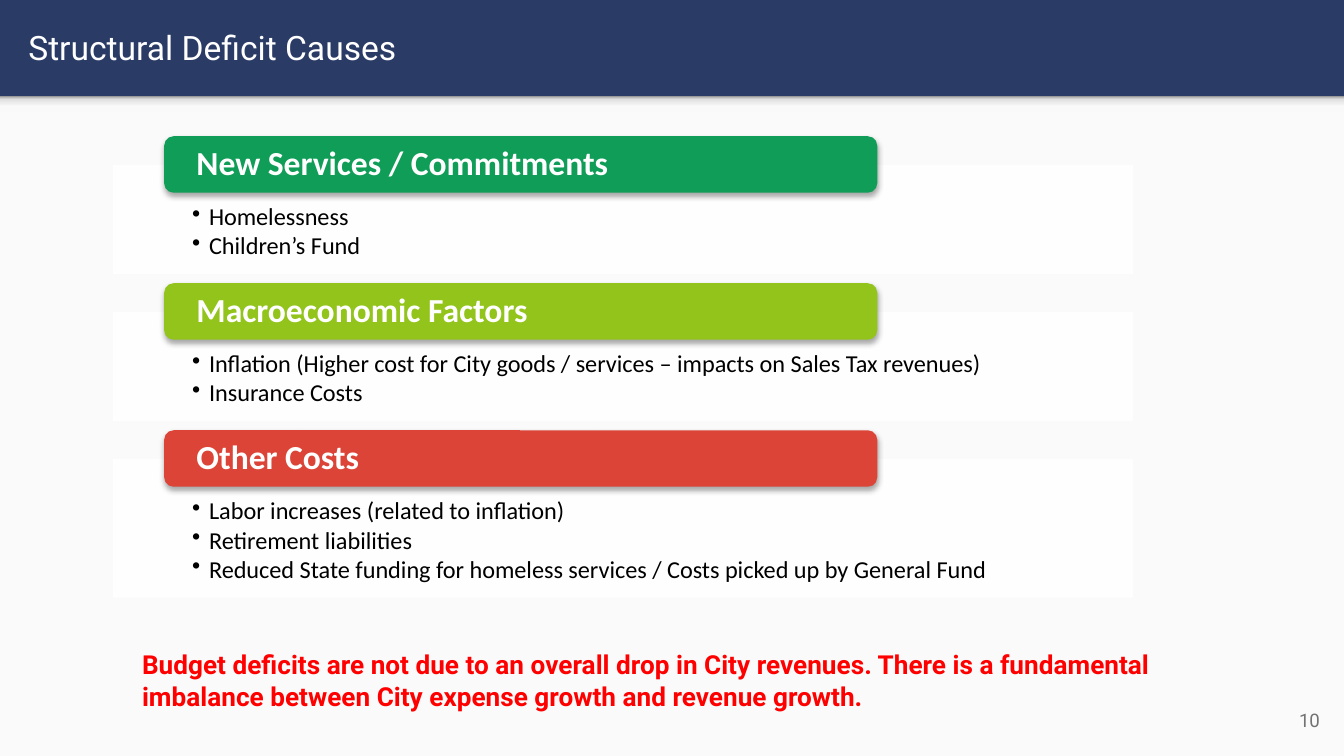
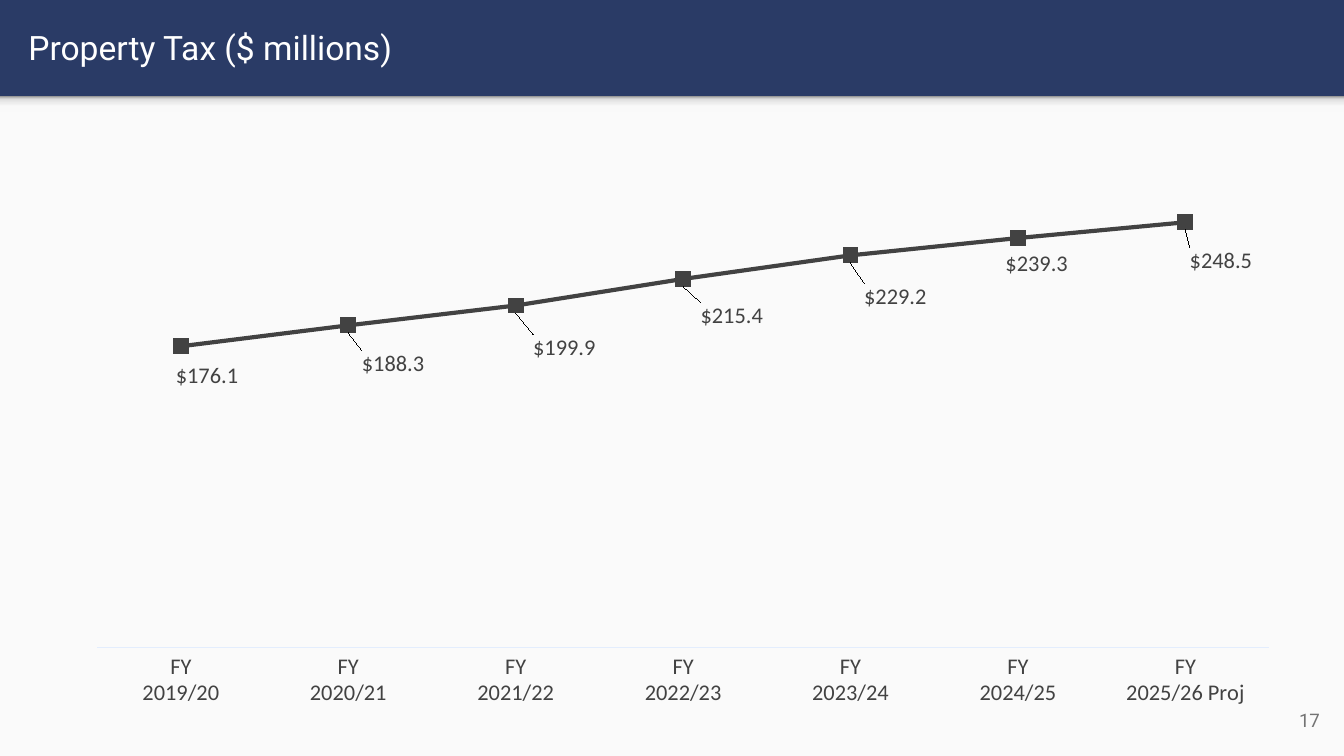
from dataclasses import dataclass

from lxml.etree import SubElement
from pptx import Presentation
from pptx.chart.chart import Chart
from pptx.chart.data import CategoryChartData
from pptx.dml.color import RGBColor
from pptx.enum.chart import XL_CHART_TYPE as ChartType
from pptx.enum.chart import XL_LABEL_POSITION as LabelPosition
from pptx.enum.chart import XL_MARKER_STYLE as MarkerStyle
from pptx.enum.chart import XL_TICK_MARK as TickMark
from pptx.enum.shapes import MSO_AUTO_SHAPE_TYPE as ShapeType
from pptx.enum.text import MSO_ANCHOR as Anchor
from pptx.enum.text import PP_ALIGN as Align
from pptx.oxml import parse_xml
from pptx.oxml.ns import nsdecls, qn
from pptx.shapes.autoshape import Shape
from pptx.slide import Slide
from pptx.text.text import TextFrame
from pptx.util import Pt


@dataclass(frozen=True)
class Theme:
    heading_font: str = "Roboto"
    body_font: str = "Calibri"
    navy: str = "2A3B66"
    page: str = "FAFAFA"
    white: str = "FFFFFF"
    black: str = "000000"
    green: str = "0F9D58"
    lime: str = "92C41B"
    tomato: str = "DB4437"
    alert: str = "FF0000"
    footer: str = "737373"
    chart_ink: str = "424242"
    axis: str = "E3EDFD"
    band_stops: tuple[tuple[int, str], ...] = (
        (0, "F9F9F9"), (36, "F9F9F9"), (80, "DEDEDE"), (100, "999999"))
    title_size: float = 18
    alert_size: float = 14
    bullet_size: float = 13
    chart_size: float = 12
    footer_size: float = 10


@dataclass(frozen=True)
class Box:
    left: float
    top: float
    width: float
    height: float

    def lengths(self) -> tuple[Pt, Pt, Pt, Pt]:
        return Pt(self.left), Pt(self.top), Pt(self.width), Pt(self.height)


@dataclass(frozen=True)
class Cause:
    heading: str
    color: str
    bullets: tuple[str, ...]


@dataclass(frozen=True)
class TaxYear:
    label: str
    millions: float
    shift_x: float
    shift_y: float


THEME = Theme()
SLIDE_WIDTH, SLIDE_HEIGHT = 720, 405
BAND_TOP = 51.5
TITLE_BOX = Box(8, 1.5, 695, 47.5)
NUMBER_BOX = Box(671, 370, 43.2, 31)
ALERT_BOX = Box(69, 344, 610, 41)
CHART_BOX = Box(39, 65.5, 654, 320)
PANEL_LEFT, PANEL_TOP, PANEL_WIDTH, PANEL_GAP = 60.5, 88.25, 546.5, 20.25
PANEL_BASE_HEIGHT, BULLET_HEIGHT = 26.5, 16
PILL_LEFT, PILL_WIDTH, PILL_HEIGHT, PILL_RISE = 88, 382, 30.25, 15.25
DOLLARS = '"$"#,##0.0'

CAUSES = (
    Cause("New Services / Commitments", THEME.green,
          ("Homelessness", "Children’s Fund")),
    Cause("Macroeconomic Factors", THEME.lime,
          ("Inflation (Higher cost for City goods / services – impacts on Sales Tax revenues)",
           "Insurance Costs")),
    Cause("Other Costs", THEME.tomato,
          ("Labor increases (related to inflation)",
           "Retirement liabilities",
           "Reduced State funding for homeless services / Costs picked up by General Fund")),
)
ALERT = ("Budget deficits are not due to an overall drop in City revenues. There is a "
         "fundamental imbalance between City expense growth and revenue growth.")
TAX_YEARS = (
    TaxYear("2019/20", 176.1, 14, 2),
    TaxYear("2020/21", 188.3, 24, 6.5),
    TaxYear("2021/22", 199.9, 26, 8.5),
    TaxYear("2022/23", 215.4, 26, 5.5),
    TaxYear("2023/24", 229.2, 24, 8),
    TaxYear("2024/25", 239.3, 10, 0),
    TaxYear("2025/26 Proj", 248.5, 19, 6.5),
)


def rgb(color: str) -> RGBColor:
    return RGBColor.from_string(color)


def style_font(font, name: str, size: float, color: str, bold: bool = False) -> None:
    font.name = name
    font.size = Pt(size)
    font.bold = bold
    font.color.rgb = rgb(color)


def set_insets(frame: TextFrame, left: float, top: float, right: float, bottom: float) -> None:
    frame.word_wrap = True
    frame.margin_left, frame.margin_top = Pt(left), Pt(top)
    frame.margin_right, frame.margin_bottom = Pt(right), Pt(bottom)


def add_block(slide: Slide, kind: ShapeType, box: Box, color: str) -> Shape:
    shape = slide.shapes.add_shape(kind, *box.lengths())
    shape.shadow.inherit = False
    shape.fill.solid()
    shape.fill.fore_color.rgb = rgb(color)
    shape.line.fill.background()
    return shape


def add_text(slide: Slide, box: Box, text: str, size: float, color: str,
             bold: bool = False) -> TextFrame:
    frame = slide.shapes.add_textbox(*box.lengths()).text_frame
    frame.word_wrap = True
    frame.text = text
    style_font(frame.paragraphs[0].runs[0].font, THEME.heading_font, size, color, bold)
    return frame


def add_band_shade(slide: Slide) -> None:
    shade = add_block(slide, ShapeType.RECTANGLE, Box(0, BAND_TOP, SLIDE_WIDTH, 8.5), THEME.page)
    shade.fill.gradient()
    shade.fill.gradient_angle = 90
    stops = shade._element.spPr.find(".//" + qn("a:gsLst"))
    stops.clear()
    for position, color in THEME.band_stops:
        stop = SubElement(stops, qn("a:gs"), pos=str(position * 1000))
        SubElement(stop, qn("a:srgbClr"), val=color)


def add_page(presentation: Presentation, title: str, number: int) -> Slide:
    slide = presentation.slides.add_slide(presentation.slide_layouts.get_by_name("Title Only"))
    add_block(slide, ShapeType.RECTANGLE,
              Box(0, BAND_TOP, SLIDE_WIDTH, SLIDE_HEIGHT - BAND_TOP), THEME.page)
    add_band_shade(slide)

    heading = slide.shapes.title
    heading.left, heading.top, heading.width, heading.height = TITLE_BOX.lengths()
    frame = heading.text_frame
    frame.text = title
    frame.vertical_anchor = Anchor.MIDDLE
    set_insets(frame, 7.2, 7.2, 7.2, 7.2)
    frame.paragraphs[0].alignment = Align.LEFT
    style_font(frame.paragraphs[0].runs[0].font, THEME.heading_font, THEME.title_size, THEME.white)

    footer = add_text(slide, NUMBER_BOX, str(number), THEME.footer_size, THEME.footer)
    footer.vertical_anchor = Anchor.MIDDLE
    set_insets(footer, 7.2, 7.2, 7.2, 7.2)
    footer.paragraphs[0].alignment = Align.RIGHT
    return slide


def add_panel(slide: Slide, box: Box, bullets: tuple[str, ...]) -> None:
    panel = add_block(slide, ShapeType.RECTANGLE, box, THEME.white)
    color = panel._element.spPr.find(qn("a:solidFill")).find(qn("a:srgbClr"))
    SubElement(color, qn("a:alpha"), val="90000")
    frame = panel.text_frame
    frame.vertical_anchor = Anchor.TOP
    set_insets(frame, 42.5, 21.5, 42.5, 7.2)
    frame.text = "\n".join(bullets)
    for paragraph in frame.paragraphs:
        paragraph.level = 1
        paragraph.alignment = Align.LEFT
        paragraph.line_spacing = 0.9
        paragraph.space_after = Pt(1.6)
        properties = paragraph._p.get_or_add_pPr()
        properties.set("marL", str(Pt(9)))
        properties.set("indent", str(Pt(-9)))
        bullet_color = SubElement(properties, qn("a:buClr"))
        SubElement(bullet_color, qn("a:srgbClr"), val=THEME.black)
        SubElement(properties, qn("a:buChar"), char="•")
        style_font(paragraph.runs[0].font, THEME.body_font, THEME.bullet_size, THEME.black)


def add_pill(slide: Slide, box: Box, cause: Cause) -> None:
    pill = add_block(slide, ShapeType.ROUNDED_RECTANGLE, box, cause.color)
    effects = pill._element.spPr.find(qn("a:effectLst"))
    shadow = SubElement(effects, qn("a:outerShdw"), blurRad=str(Pt(3.1)), dist=str(Pt(1.8)),
                        dir="5400000", rotWithShape="0")
    color = SubElement(shadow, qn("a:srgbClr"), val=THEME.black)
    SubElement(color, qn("a:alpha"), val="35000")
    frame = pill.text_frame
    frame.text = cause.heading
    frame.vertical_anchor = Anchor.MIDDLE
    set_insets(frame, 15.8, 0, 15.8, 0)
    paragraph = frame.paragraphs[0]
    paragraph.alignment = Align.LEFT
    paragraph.line_spacing = 0.9
    style_font(paragraph.runs[0].font, THEME.body_font, THEME.title_size, THEME.white, True)


def add_causes(slide: Slide) -> None:
    top = PANEL_TOP
    for cause in CAUSES:
        height = PANEL_BASE_HEIGHT + BULLET_HEIGHT * len(cause.bullets)
        add_panel(slide, Box(PANEL_LEFT, top, PANEL_WIDTH, height), cause.bullets)
        add_pill(slide, Box(PILL_LEFT, top - PILL_RISE, PILL_WIDTH, PILL_HEIGHT), cause)
        top += height + PANEL_GAP


def chart_layout(values: dict[str, object]):
    settings = "".join(f'<c:{name} val="{value}"/>' for name, value in values.items())
    return parse_xml(f'<c:layout {nsdecls("c")}><c:manualLayout>{settings}'
                     "</c:manualLayout></c:layout>")


def place_plot(chart: Chart) -> None:
    plot_area = chart._chartSpace.find(".//" + qn("c:plotArea"))
    for layout in plot_area.findall(qn("c:layout")):
        plot_area.remove(layout)
    plot_area.insert(0, chart_layout({
        "layoutTarget": "inner", "xMode": "edge", "yMode": "edge",
        "x": 0.02, "y": 0.02, "w": 0.96, "h": 0.86}))


def style_labels(series) -> None:
    labels = series.data_labels
    labels.show_value = True
    labels.number_format = DOLLARS
    labels.number_format_is_linked = False
    labels.position = LabelPosition.BELOW
    style_font(labels.font, THEME.body_font, THEME.chart_size, THEME.chart_ink)
    for index, year in enumerate(TAX_YEARS):
        label = series.points[index].data_label
        label.position = LabelPosition.BELOW
        style_font(label.font, THEME.body_font, THEME.chart_size, THEME.chart_ink)
    for element, year in zip(series._element.iter(qn("c:dLbl")), TAX_YEARS):
        element.insert(1, chart_layout({
            "x": round(year.shift_x / CHART_BOX.width, 4),
            "y": round(year.shift_y / CHART_BOX.height, 4)}))
        number_format = SubElement(element, qn("c:numFmt"), formatCode=DOLLARS, sourceLinked="0")
        element.insert(2, number_format)


def add_tax_chart(slide: Slide) -> None:
    data = CategoryChartData(number_format=DOLLARS)
    data.categories = [f"FY\n{year.label}" for year in TAX_YEARS]
    data.add_series("Series 1", [year.millions for year in TAX_YEARS])
    chart = slide.shapes.add_chart(ChartType.LINE_MARKERS, *CHART_BOX.lengths(), data).chart
    chart.has_title = False
    chart.has_legend = False
    style_font(chart.font, THEME.body_font, THEME.chart_size, THEME.chart_ink)
    place_plot(chart)

    chart.value_axis.visible = False
    chart.value_axis.has_major_gridlines = False
    chart.value_axis.minimum_scale = 0
    chart.value_axis.maximum_scale = 300
    axis = chart.category_axis
    axis.major_tick_mark = TickMark.NONE
    axis.format.line.color.rgb = rgb(THEME.axis)
    axis.format.line.width = Pt(0.75)
    style_font(axis.tick_labels.font, THEME.body_font, THEME.chart_size, THEME.chart_ink)

    chart.plots[0].vary_by_categories = False
    series = chart.plots[0].series[0]
    series.smooth = False
    series.format.line.color.rgb = rgb(THEME.chart_ink)
    series.format.line.width = Pt(2.25)
    series.marker.style = MarkerStyle.SQUARE
    series.marker.size = 8
    series.marker.format.fill.solid()
    series.marker.format.fill.fore_color.rgb = rgb(THEME.chart_ink)
    series.marker.format.line.color.rgb = rgb(THEME.chart_ink)
    style_labels(series)


def main() -> None:
    presentation = Presentation()
    presentation.slide_width, presentation.slide_height = Pt(SLIDE_WIDTH), Pt(SLIDE_HEIGHT)
    background = presentation.slide_master.background.fill
    background.solid()
    background.fore_color.rgb = rgb(THEME.navy)

    causes_slide = add_page(presentation, "Structural Deficit Causes", 10)
    add_causes(causes_slide)
    add_text(causes_slide, ALERT_BOX, ALERT, THEME.alert_size, THEME.alert, True)

    add_tax_chart(add_page(presentation, "Property Tax ($ millions)", 17))
    presentation.save("out.pptx")


if __name__ == "__main__":
    main()
